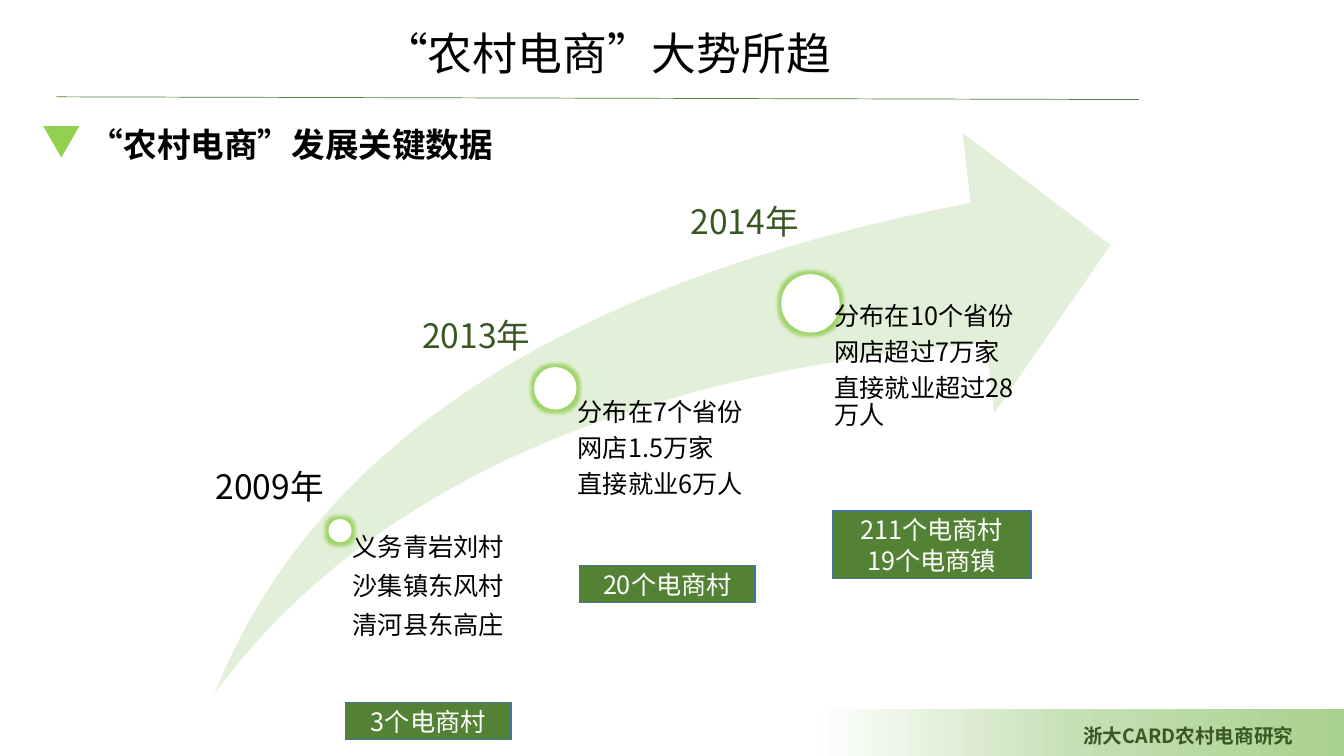
from copy import deepcopy

from lxml import etree
from pptx import Presentation
from pptx.dml.color import RGBColor
from pptx.enum.shapes import MSO_CONNECTOR, MSO_SHAPE
from pptx.enum.text import MSO_ANCHOR, MSO_AUTO_SIZE, PP_ALIGN
from pptx.oxml.ns import qn
from pptx.util import Cm, Pt

RECTANGLE, OVAL = MSO_SHAPE.RECTANGLE, MSO_SHAPE.OVAL
TRIANGLE, SWOOSH = MSO_SHAPE.ISOSCELES_TRIANGLE, MSO_SHAPE.SWOOSH_ARROW
TOP, MIDDLE = MSO_ANCHOR.TOP, MSO_ANCHOR.MIDDLE
LEFT, CENTER, JUSTIFY = PP_ALIGN.LEFT, PP_ALIGN.CENTER, PP_ALIGN.JUSTIFY
STRAIGHT, NO_FIT = MSO_CONNECTOR.STRAIGHT, MSO_AUTO_SIZE.NONE

FONT = "Noto Sans CJK SC"
COMPARISON_LAYOUT = 4
COLORS = {
    "black": "000000", "white": "FFFFFF", "forest": "385723",
    "green": "548235", "lime": "92D050", "pale": "E2F0D9",
    "mid": "C5E0B4", "leaf": "A9D18E", "edge": "43739E",
}

# Each milestone: year label, circle, list of facts and badge, in cm
MILESTONES = [
    {"year": "2009年", "year_at": (5.18, 11.61), "year_color": "black",
     "circle": (8.28, 13.08, 0.58),
     "facts": ["义务青岩刘村", "沙集镇东风村", "清河县东高庄"],
     "facts_at": (8.59, 13.39, 5.26, 4.09), "inset": 0.3, "spacing": 1.0,
     "badge": ["3个电商村"], "badge_at": (8.71, 17.7, 4.17, 0.94)},
    {"year": "2013年", "year_at": (10.39, 7.82), "year_color": "forest",
     "circle": (13.46, 9.25, 1.07),
     "facts": ["分布在7个省份", "网店1.5万家", "直接就业6万人"],
     "facts_at": (14, 10.08, 6.63, 7.67), "inset": 0.56, "spacing": 0.9,
     "badge": ["20个电商村"], "badge_at": (14.61, 14.25, 4.42, 0.94)},
    {"year": "2014年", "year_at": (17.15, 4.93), "year_color": "forest",
     "circle": (19.69, 6.91, 1.47),
     "facts": ["分布在10个省份", "网店超过7万家", "直接就业超过28万人"],
     "facts_at": (20.24, 7.65, 5.82, 9.8), "inset": 0.79, "spacing": 0.9,
     "badge": ["211个电商村", "19个电商镇"], "badge_at": (20.98, 12.88, 5, 1.7)},
]


def rgb(name):
    return RGBColor.from_string(COLORS[name])


class PageBuilder:
    """Holds the style and the current slide."""

    def __init__(self, deck):
        self.page = deck.slides.add_slide(deck.slide_layouts[COMPARISON_LAYOUT])
        self.title, *self.bodies = self.page.placeholders

    def fill_text(self, box, lines, size, color, bold=False, align=LEFT,
                  anchor=TOP, insets=None, spacing=1.0, after=0):
        frame = box.text_frame
        frame_format = {"word_wrap": True, "auto_size": NO_FIT, "vertical_anchor": anchor}
        if insets:
            sides = ("margin_left", "margin_top", "margin_right", "margin_bottom")
            frame_format.update(zip(sides, map(Cm, insets)))
        for key, value in frame_format.items():
            setattr(frame, key, value)
        para_format = {"alignment": align, "line_spacing": spacing,
                       "space_before": Pt(0), "space_after": Pt(after)}
        font_format = {"name": FONT, "size": Pt(size), "bold": bold}
        for index, line in enumerate(lines):
            para = frame.add_paragraph() if index else frame.paragraphs[0]
            for key, value in para_format.items():
                setattr(para, key, value)
            if box.is_placeholder:
                properties = para._p.get_or_add_pPr()
                properties.set("marL", "0")
                properties.set("indent", "0")
                etree.SubElement(properties, qn("a:buNone"))
            span = para.add_run()
            span.text = line
            for key, value in font_format.items():
                setattr(span.font, key, value)
            span.font.color.rgb = rgb(color)
            etree.SubElement(span._r.get_or_add_rPr(), qn("a:ea"), typeface=FONT)

    def placeholder(self, box, place, lines, size, color, **options):
        for key, value in zip(("left", "top", "width", "height"), place):
            setattr(box, key, Cm(value))
        # Bring the placeholder in front of the shapes drawn so far
        box.element.getparent().append(box.element)
        self.fill_text(box, lines, size, color, **options)

    def text(self, place, lines, size, color, **options):
        box = self.page.shapes.add_textbox(*map(Cm, place))
        self.fill_text(box, lines, size, color, **options)

    def shape(self, kind, place, fill, line=None):
        shape = self.page.shapes.add_shape(kind, *map(Cm, place))
        shape.shadow.inherit = False
        shape.fill.solid()
        shape.fill.fore_color.rgb = rgb(fill)
        if line:
            shape.line.color.rgb = rgb(line)
            shape.line.width = Pt(1)
        else:
            shape.line.fill.background()
        return shape

    def gradient_band(self, place, stops, angle):
        band = self.shape(RECTANGLE, place, "white")
        band.fill.gradient()
        band.fill.gradient_angle = angle
        stop_list = band.element.find(".//" + qn("a:gsLst"))
        while len(stop_list) < len(stops):
            stop_list.append(deepcopy(stop_list[0]))
        for stop, (position, color) in zip(band.fill.gradient_stops, stops):
            stop.position = position
            stop.color.rgb = rgb(color)

    def glowing_circle(self, left, top, size):
        circle = self.shape(OVAL, (left, top, size, size), "white")
        effects = circle.element.spPr.find(qn("a:effectLst"))
        glow = etree.SubElement(effects, qn("a:glow"), rad=str(int(Pt(5))))
        color = etree.SubElement(glow, qn("a:srgbClr"), val=COLORS["lime"])
        etree.SubElement(color, qn("a:alpha"), val="80000")

    def rule(self, ends, color, width):
        line = self.page.shapes.add_connector(STRAIGHT, *map(Cm, ends))
        line.line.color.rgb = rgb(color)
        line.line.width = Pt(width)
        etree.SubElement(line.element.spPr, qn("a:effectLst"))

    def badge(self, place, lines):
        box = self.shape(RECTANGLE, place, "green", "edge")
        self.fill_text(box, lines, 18, "white", align=CENTER, anchor=MIDDLE)


def main():
    deck = Presentation()
    deck.slide_width, deck.slide_height = Cm(33.87), Cm(19.05)
    builder = PageBuilder(deck)
    subtitle, *fact_boxes = builder.bodies[:4]
    for unused in builder.bodies[4:]:
        unused.element.getparent().remove(unused.element)

    # Footer and header rule
    builder.gradient_band((20.52, 17.86, 13.35, 1.19),
                          [(0, "leaf"), (0.5, "mid"), (1, "white")], 180)
    builder.text((27.05, 18.11, 6.82, 0.86), ["浙大CARD农村电商研究"],
                 14, "forest", bold=True, align=JUSTIFY)
    builder.rule((1.42, 2.44, 28.7, 2.51), "green", 0.5)

    # Title and subtitle with its marker
    builder.placeholder(builder.title, (9.4, 0.51, 13.61, 1.63),
                        ["“农村电商”大势所趋"], 32, "black", align=JUSTIFY)
    builder.placeholder(subtitle, (2.01, 3, 11.58, 1.27),
                        ["“农村电商”发展关键数据"], 24, "black", bold=True)
    marker = builder.shape(TRIANGLE, (1.09, 3.18, 0.91, 0.79), "lime")
    marker.rotation = 180

    # Growth arrow
    arrow = builder.shape(SWOOSH, (5.41, 3.35, 22.58, 14.12), "pale")
    arrow.adjustments[0] = arrow.adjustments[1] = 0.25

    # Milestones along the arrow
    for stage, fact_box in zip(MILESTONES, fact_boxes):
        builder.glowing_circle(*stage["circle"])
        builder.placeholder(fact_box, stage["facts_at"], stage["facts"], 18, "black",
                            insets=(stage["inset"], 0, 0, 0),
                            spacing=stage["spacing"], after=6.3)
        builder.text((*stage["year_at"], 3.84, 1.27), [stage["year"]],
                     24, stage["year_color"])
        builder.badge(stage["badge_at"], stage["badge"])

    deck.save("out.pptx")


if __name__ == "__main__":
    main()
